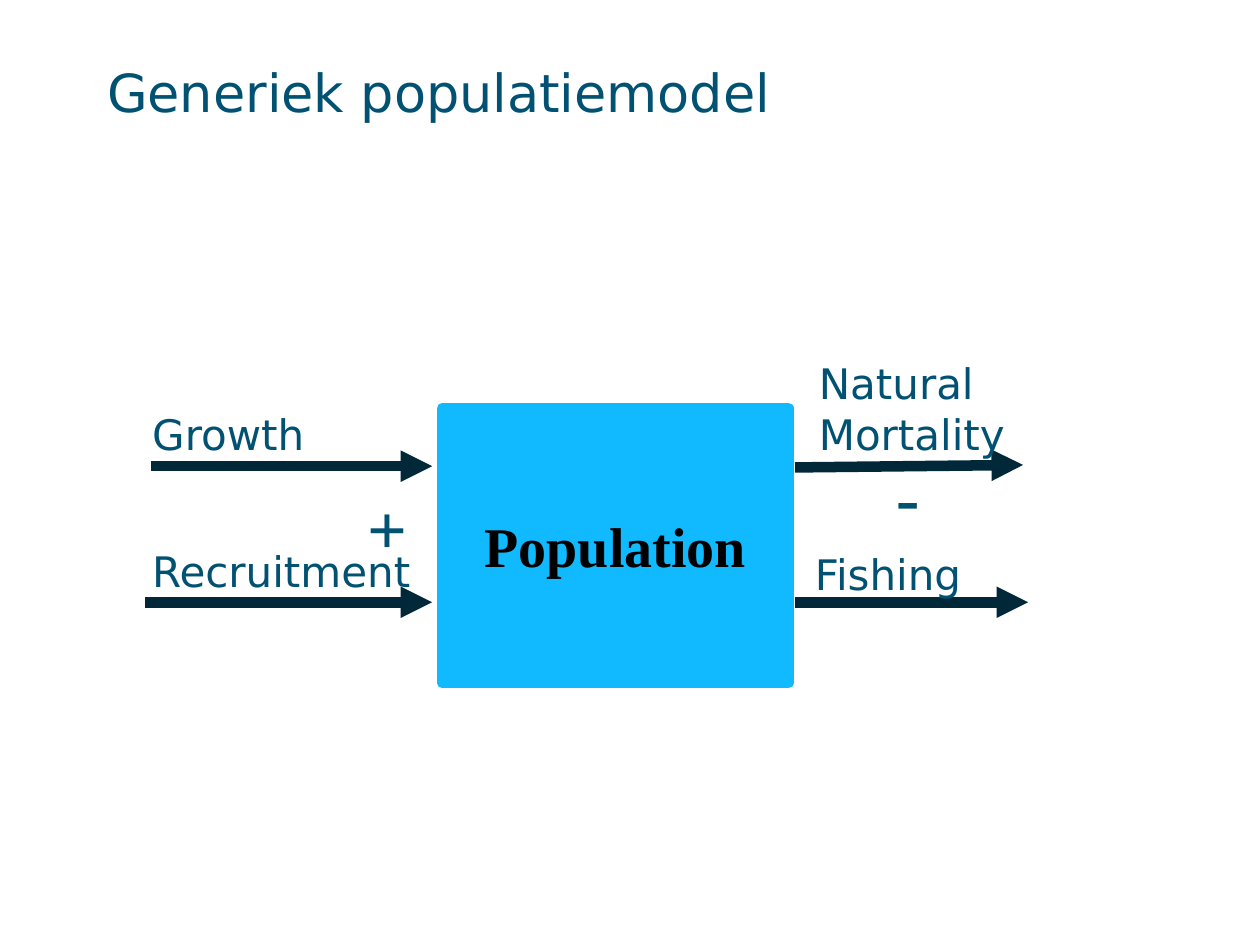
from typing import NamedTuple

from lxml import etree
from pptx import Presentation
from pptx import util as u
from pptx.dml.color import RGBColor
from pptx.enum import shapes, text
from pptx.oxml import ns

SANS, SERIF = "DejaVu Sans", "Times New Roman"
TEAL, NAVY, SKY, BLACK = "005172", "002839", "11BAFF", "000000"
STROKE = u.Pt(6)


class Label(NamedTuple):
    lines: tuple[str, ...]
    left: float
    top: float
    width: float
    height: float
    size: int = 24
    name: str = SANS
    bold: bool = False


class Flow(NamedTuple):
    start_x: float
    start_y: float
    end_x: float
    end_y: float


TITLE = Label(("Generiek populatiemodel",), 0.83, 0.42, 8.17, 0.87, 30)
POPULATION = Label(("Population",), 3.51, 3.24, 2.75, 2.18, 32, SERIF, True)
FLOWS = (
    Flow(1.15, 4.78, 3.43, 4.78),
    Flow(1.2, 3.7, 3.43, 3.7),
    Flow(6.31, 4.78, 8.16, 4.78),
    Flow(6.31, 3.71, 8.12, 3.69),
)
LABELS = (
    Label(("Growth",), 1.11, 3.19, 2.01, 0.5),
    Label(("Recruitment",), 1.11, 4.28, 2.32, 0.5),
    Label(("Natural", "Mortality"), 6.4, 2.79, 1.88, 0.91),
    Label(("Fishing",), 6.37, 4.3, 2.24, 0.51),
    Label(("+",), 2.82, 3.8, 0.44, 0.77, 40, SERIF, True),
    Label(("-",), 7.01, 3.57, 0.46, 0.77, 40),
)


def colour(value: str) -> RGBColor:
    return RGBColor.from_string(value)


def set_all(target, values: dict) -> None:
    for key, value in values.items():
        setattr(target, key, value)


def bounds(label: Label) -> list[u.Length]:
    return [u.Inches(side) for side in (label.left, label.top, label.width, label.height)]


def write(box, label: Label, ink: str) -> None:
    frame = box.text_frame
    for index, line in enumerate(label.lines):
        para = frame.add_paragraph() if index else frame.paragraphs[0]
        span = para.add_run()
        span.text = line
        set_all(span.font, {"size": u.Pt(label.size), "name": label.name, "bold": label.bold})
        span.font.color.rgb = colour(ink)


def add_label(page, label: Label):
    box = page.shapes.add_textbox(*bounds(label))
    box.text_frame.word_wrap = True
    write(box, label, TEAL)
    return box


def add_title(page) -> None:
    frame = add_label(page, TITLE).text_frame
    set_all(frame, {
        "margin_left": u.Inches(0.02),
        "margin_top": 0,
        "margin_right": u.Inches(0.1),
        "margin_bottom": u.Inches(0.35),
    })
    frame.paragraphs[0].line_spacing = u.Pt(40)


def add_population(page) -> None:
    box = page.shapes.add_shape(shapes.MSO_SHAPE.RECTANGLE, *bounds(POPULATION))
    box.shadow.inherit = False
    box.fill.solid()
    box.fill.fore_color.rgb = colour(SKY)
    box.line.color.rgb = colour(SKY)
    box.line.width = STROKE
    set_all(box.text_frame, {"word_wrap": False, "vertical_anchor": text.MSO_ANCHOR.MIDDLE})
    write(box, POPULATION, BLACK)
    box.text_frame.paragraphs[0].alignment = text.PP_ALIGN.CENTER


def add_flow(page, flow: Flow) -> None:
    ends = [u.Inches(value) for value in flow]
    arrow = page.shapes.add_connector(shapes.MSO_CONNECTOR.STRAIGHT, *ends)
    arrow.line.color.rgb = colour(NAVY)
    arrow.line.width = STROKE
    properties = arrow.line._get_or_add_ln()
    etree.SubElement(properties, ns.qn("a:tailEnd"), type="triangle")
    etree.SubElement(arrow._element.spPr, ns.qn("a:effectLst"))


def main() -> None:
    deck = Presentation()
    set_all(deck, {"slide_width": u.Inches(10), "slide_height": u.Inches(7.5)})
    page = deck.slides.add_slide(deck.slide_layouts[6])
    add_title(page)
    add_population(page)
    for flow in FLOWS:
        add_flow(page, flow)
    for label in LABELS:
        add_label(page, label)
    deck.save("out.pptx")


if __name__ == "__main__":
    main()
